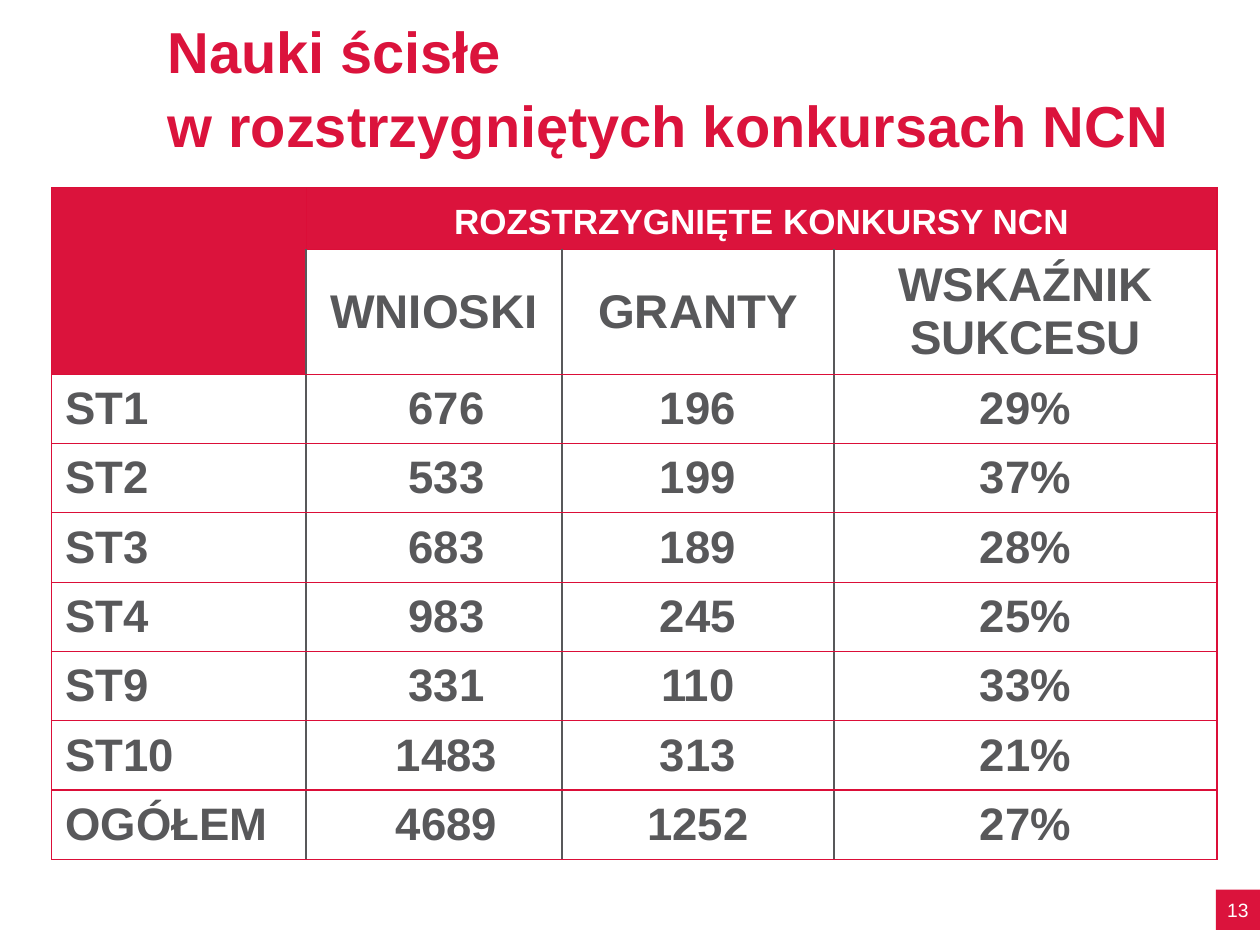
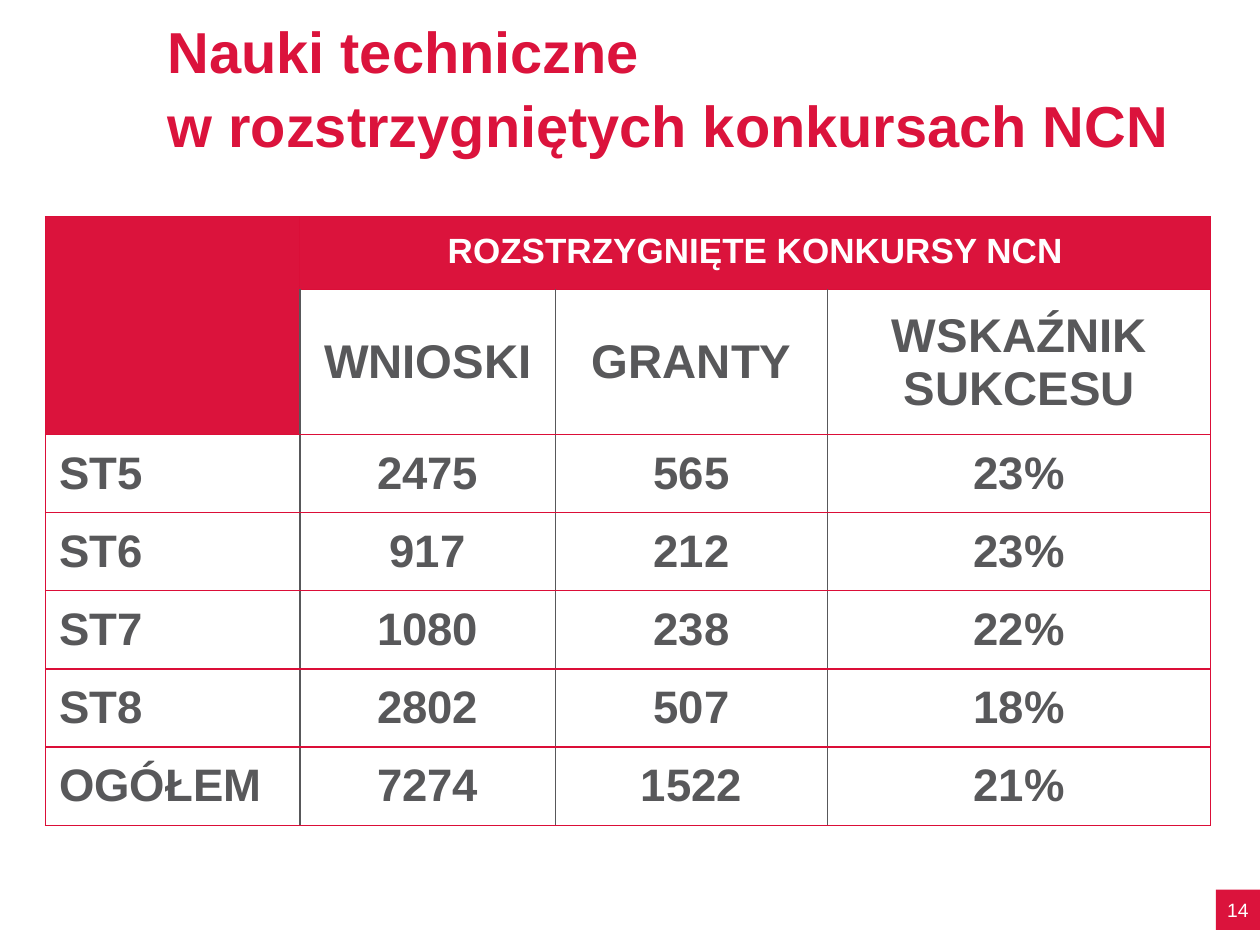
"""Build two slides with tables of grant results for the sciences."""
from lxml.etree import SubElement
from pptx import Presentation
from pptx.dml.color import RGBColor
from pptx.enum.shapes import MSO_SHAPE as Shape
from pptx.enum.text import MSO_ANCHOR as Anchor, MSO_AUTO_SIZE as AutoSize, PP_ALIGN as Align
from pptx.oxml.ns import qn
from pptx.util import Inches, Pt

FONT = "Arial"
RED, RULE_RED, GREY, WHITE = "DB133C", "DB0E38", "58585A", "FFFFFF"
TITLE_SIZE = 33
TITLE_TAIL = "w rozstrzygniętych konkursach NCN"
BANNER = "ROZSTRZYGNIĘTE KONKURSY NCN"
MEASURES = ["WNIOSKI", "GRANTY", "WSKAŹNIK SUKCESU"]
COLUMN_WIDTHS = [2.02, 2.03, 2.16, 3.04]
PLAIN_TABLE = "{2D5ABB26-0587-4C30-8999-92F81FD0307C}"

REPORTS = [
    {
        "field": "Nauki ścisłe",
        "page": 13,
        "corner": (0.41, 1.49),
        "heights": (0.49, 0.99, 0.55),
        "number_shift": 0.2,
        "panels": [
            ("ST1", "676", "196", "29%"),
            ("ST2", "533", "199", "37%"),
            ("ST3", "683", "189", "28%"),
            ("ST4", "983", "245", "25%"),
            ("ST9", "331", "110", "33%"),
            ("ST10", "1483", "313", "21%"),
            ("OGÓŁEM", "4689", "1252", "27%"),
        ],
    },
    {
        "field": "Nauki techniczne",
        "page": 14,
        "corner": (0.36, 1.72),
        "heights": (0.58, 1.15, 0.62),
        "number_shift": 0,
        "panels": [
            ("ST5", "2475", "565", "23%"),
            ("ST6", "917", "212", "23%"),
            ("ST7", "1080", "238", "22%"),
            ("ST8", "2802", "507", "18%"),
            ("OGÓŁEM", "7274", "1522", "21%"),
        ],
    },
]


def colour(value):
    return RGBColor.from_string(value)


def write(frame, text, size, ink, bold=True, align=Align.CENTER, spacing=None):
    paragraph = frame.paragraphs[0]
    paragraph.text = text
    paragraph.alignment = align
    paragraph.line_spacing = spacing
    for run in paragraph.runs:
        run.font.name, run.font.size, run.font.bold = FONT, Pt(size), bold
        run.font.color.rgb = colour(ink)


def rule_cell(cell, row, column):
    last = len(COLUMN_WIDTHS) - 1
    edges = {"L": row > 0 and column > 0, "R": row > 0 and column < last, "T": False, "B": False}
    properties = cell._tc.get_or_add_tcPr()
    for side, inner in edges.items():
        line = SubElement(properties, qn(f"a:ln{side}"), w=str(Pt(1 if inner else 0.75)))
        fill = SubElement(line, qn("a:solidFill"))
        SubElement(fill, qn("a:srgbClr"), val=GREY if inner else RULE_RED)


def add_results(slide, report):
    rows = [("", BANNER, "", ""), ("", *MEASURES), *report["panels"]]
    banner_height, measure_height, panel_height = report["heights"]
    heights = [banner_height, measure_height] + [panel_height] * len(report["panels"])
    left, top = report["corner"]
    frame = slide.shapes.add_table(
        len(rows), len(COLUMN_WIDTHS), Inches(left), Inches(top),
        Inches(sum(COLUMN_WIDTHS)), Inches(sum(heights)))
    results = frame.table
    results._tbl.tblPr.find(qn("a:tableStyleId")).text = PLAIN_TABLE
    results.first_row = results.horz_banding = False
    for column, width in zip(results.columns, COLUMN_WIDTHS):
        column.width = Inches(width)
    for row, height in zip(results.rows, heights):
        row.height = Inches(height)

    for r, values in enumerate(rows):
        for c, value in enumerate(values):
            cell = results.cell(r, c)
            is_red = r == 0 or (r == 1 and c == 0)
            rule_cell(cell, r, c)
            cell.fill.solid()
            cell.fill.fore_color.rgb = colour(RED if is_red else WHITE)
            cell.margin_left = cell.margin_right = Inches(0.11)
            cell.margin_top = Inches(0.05 if r else 0.12)
            cell.margin_bottom = Inches(0.05)
            cell.vertical_anchor = Anchor.MIDDLE if r else Anchor.TOP
            if r > 1 and c == 1:
                cell.margin_left = Inches(0.11 + report["number_shift"])
            if value:
                write(cell.text_frame, value, size=(20, 27, 26)[min(r, 2)],
                      ink=WHITE if is_red else GREY,
                      align=Align.LEFT if c == 0 else Align.CENTER)
    results.cell(0, 0).merge(results.cell(1, 0))
    results.cell(0, 1).merge(results.cell(0, 3))


def add_page_number(slide, page):
    badge = slide.shapes.add_shape(
        Shape.RECTANGLE, Inches(9.65), Inches(7.06), Inches(0.35), Inches(0.32))
    badge.shadow.inherit = False
    badge.fill.solid()
    badge.fill.fore_color.rgb = colour(RED)
    badge.line.fill.background()
    frame = badge.text_frame
    frame.margin_left = frame.margin_right = frame.margin_top = frame.margin_bottom = 0
    frame.word_wrap = False
    frame.vertical_anchor = Anchor.MIDDLE
    write(frame, str(page), size=11, ink=WHITE, bold=False)


def style_titles(deck, layout):
    style = deck.slide_master.element.find(".//" + qn("p:titleStyle"))
    style.find(".//" + qn("a:defRPr")).set("sz", str(TITLE_SIZE * 100))
    title = next(p for p in layout.placeholders if p.placeholder_format.idx == 0)
    title.left, title.top = Inches(1.23), Inches(0.08)
    title.width, title.height = Inches(8.77), Inches(1.23)
    title.text_frame.vertical_anchor = Anchor.BOTTOM
    title.text_frame.auto_size = AutoSize.NONE


def main():
    deck = Presentation()
    deck.slide_width, deck.slide_height = Inches(10), Inches(7.5)
    layout = deck.slide_layouts[5]
    style_titles(deck, layout)
    for report in REPORTS:
        slide = deck.slides.add_slide(layout)
        write(slide.shapes.title.text_frame, f"{report['field']}\n{TITLE_TAIL}",
              size=TITLE_SIZE, ink=RED, align=Align.LEFT, spacing=1.06)
        add_results(slide, report)
        add_page_number(slide, report["page"])
    deck.save("out.pptx")


if __name__ == "__main__":
    main()
